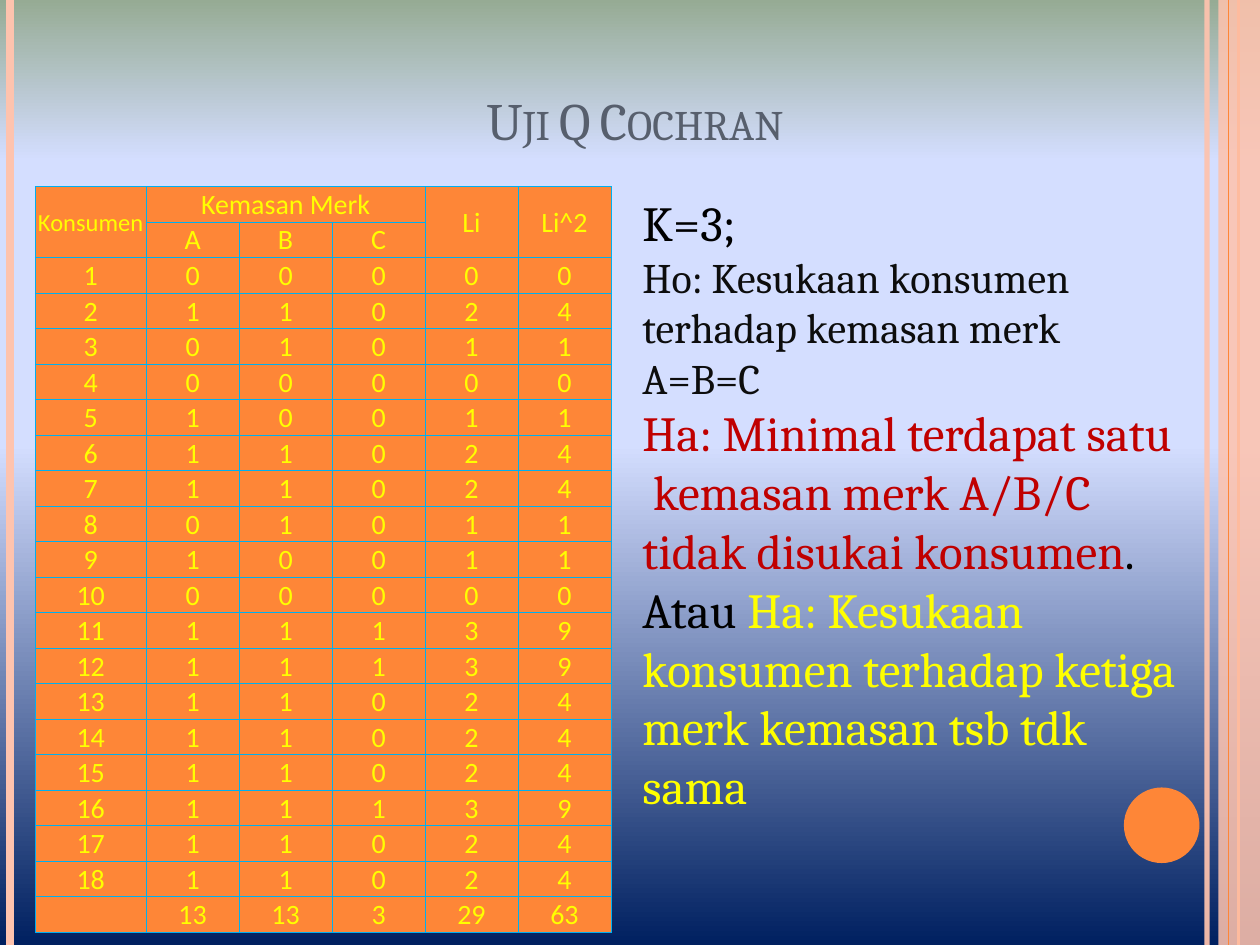
from lxml import etree
from pptx import Presentation
from pptx.dml.color import RGBColor
from pptx.enum import shapes, text
from pptx.oxml.ns import qn
from pptx.util import Inches, Pt

ORANGE = RGBColor(0xFE, 0x86, 0x37)
PEACH = RGBColor(0xFE, 0xC3, 0xAE)
SLATE = RGBColor(0x57, 0x5F, 0x6D)
YELLOW = RGBColor(0xFF, 0xFF, 0x00)
RED = RGBColor(0xC0, 0x00, 0x00)
BLACK = RGBColor(0x00, 0x00, 0x00)
NEAR_BLACK = RGBColor(0x0D, 0x0D, 0x0D)
SKY = RGBColor(0x00, 0xB0, 0xF0)
NAVY = RGBColor(0x00, 0x20, 0x60)
PALE_BLUE = RGBColor(0xD4, 0xDE, 0xFF)
SAGE = RGBColor(0x96, 0xAB, 0x94)

# Answers of each consumer for packagings A, B and C
ANSWERS = ("000 110 010 000 100 110 110 010 100 "
           "000 111 111 110 110 110 111 110 110").split()


def add_text(paragraph, content, size, color, font="Cambria", align=None, small_caps=False):
    """Append one formatted run to a paragraph."""
    run = paragraph.add_run()
    run.text = content
    run.font.size = Pt(size)
    run.font.name = font
    run.font.color.rgb = color
    if align is not None:
        paragraph.alignment = align
    if small_caps:
        run.font._element.set("cap", "small")


def set_alpha(shape, percent):
    for color in shape._element.spPr.iter(qn("a:srgbClr")):
        etree.SubElement(color, qn("a:alpha"), val=str(percent * 1000))


def paint_background(slide):
    fill = slide.background.fill
    fill.gradient()
    fill.gradient_angle = 90
    stop_list = fill.gradient_stops[0]._gs.getparent()
    for stop in list(stop_list):
        stop_list.remove(stop)
    for percent, color in ((0, NAVY), (53, PALE_BLUE), (83, PALE_BLUE), (100, SAGE)):
        stop = etree.SubElement(stop_list, qn("a:gs"), pos=str(percent * 1000))
        etree.SubElement(stop, qn("a:srgbClr"), val=str(color))


def add_stripe(slide, x, height, color, width):
    """Vertical line over the full slide height."""
    stripe = slide.shapes.add_connector(
        shapes.MSO_CONNECTOR.STRAIGHT, Inches(x), 0, Inches(x), height)
    stripe.line.color.rgb = color
    stripe.line.width = Pt(width)
    etree.SubElement(stripe._element.spPr, qn("a:effectLst"))
    return stripe


def add_plain_shape(slide, kind, left, top, width, height, color):
    shape = slide.shapes.add_shape(kind, left, top, width, height)
    shape.shadow.inherit = False
    shape.fill.solid()
    shape.fill.fore_color.rgb = color
    shape.line.fill.background()
    return shape


def add_decoration(slide, height):
    set_alpha(add_stripe(slide, 9.58, height, PEACH, 3), 93)
    add_stripe(slide, 0.08, height, PEACH, 4.5)
    add_stripe(slide, 9.83, height, ORANGE, 1.5)
    band = add_plain_shape(slide, shapes.MSO_SHAPE.RECTANGLE,
                           Inches(9.67), 0, Inches(0.33), height, PEACH)
    set_alpha(band, 87)
    add_stripe(slide, 9.75, height, ORANGE, 0.75)
    add_plain_shape(slide, shapes.MSO_SHAPE.OVAL, Inches(8.92), Inches(6.25),
                    Inches(0.6), Inches(0.6), ORANGE)


def fill_title(slide, left, top, width, height):
    title = slide.shapes.title
    title.left, title.top, title.width, title.height = left, top, width, height
    title.text_frame.vertical_anchor = text.MSO_ANCHOR.BOTTOM
    add_text(title.text_frame.paragraphs[0], "Uji Q Cochran", 30, SLATE,
             align=text.PP_ALIGN.CENTER, small_caps=True)


def table_rows():
    """Two heading rows, one row for each consumer, and the totals."""
    rows = [["Konsumen", "Kemasan Merk", "", "", "Li", "Li^2"],
            ["", "A", "B", "C", "", ""]]
    scores = []
    for answer in ANSWERS:
        values = [int(digit) for digit in answer]
        scores.append(values + [sum(values), sum(values) ** 2])
    rows += [[number, *score] for number, score in enumerate(scores, 1)]
    rows.append(["", *(sum(column) for column in zip(*scores))])
    return rows


def format_cell(cell, content):
    cell.margin_left = cell.margin_right = cell.margin_top = Inches(0.01)
    cell.margin_bottom = 0
    cell.vertical_anchor = text.MSO_ANCHOR.MIDDLE
    cell.fill.solid()
    cell.fill.fore_color.rgb = ORANGE
    paragraph = cell.text_frame.paragraphs[0]
    if content != "":
        size = 14 if content == "Konsumen" else 16
        add_text(paragraph, str(content), size, YELLOW, font="Calibri",
                 align=text.PP_ALIGN.CENTER)
    else:
        etree.SubElement(paragraph._p, qn("a:endParaRPr"), sz="1600")
    # Borders come before the fill in the cell properties
    properties = cell._tc.get_or_add_tcPr()
    for index, side in enumerate(("a:lnL", "a:lnR", "a:lnT", "a:lnB")):
        border = etree.Element(qn(side), w=str(Pt(0.5)))
        solid = etree.SubElement(border, qn("a:solidFill"))
        etree.SubElement(solid, qn("a:srgbClr"), val=str(SKY))
        properties.insert(index, border)


def add_score_table(slide, left, top, width, height):
    rows = table_rows()
    table = slide.shapes.add_table(len(rows), 6, left, top, width, height).table
    table.first_row = table.horz_banding = False
    first_width = Inches(0.88)
    for index, column in enumerate(table.columns):
        column.width = first_width if index == 0 else (width - first_width) // 5
    for row_index, row in enumerate(rows):
        for column_index, content in enumerate(row):
            format_cell(table.cell(row_index, column_index), content)
    # Headings that span rows or columns
    for column_index in (0, 4, 5):
        table.cell(0, column_index).merge(table.cell(1, column_index))
    table.cell(0, 1).merge(table.cell(0, 3))


def add_hypotheses(slide, left, top, width, height):
    frame = slide.shapes.add_textbox(left, top, width, height).text_frame
    frame.word_wrap = True
    frame.auto_size = text.MSO_AUTO_SIZE.SHAPE_TO_FIT_TEXT
    paragraphs = (
        [("K=3;", 28, BLACK)],
        [("Ho: Kesukaan konsumen terhadap kemasan merk A=B=C", 24, NEAR_BLACK)],
        [("Ha: Minimal terdapat satu  kemasan merk A/B/C tidak disukai konsumen", 28, RED),
         (". Atau ", 28, BLACK),
         ("Ha: Kesukaan konsumen terhadap ketiga merk kemasan tsb tdk sama", 28, YELLOW)],
    )
    for index, runs in enumerate(paragraphs):
        paragraph = frame.add_paragraph() if index else frame.paragraphs[0]
        for content, size, color in runs:
            add_text(paragraph, content, size, color)


def main():
    presentation = Presentation()
    presentation.slide_width, presentation.slide_height = Inches(10), Inches(7.5)
    slide = presentation.slides.add_slide(presentation.slide_layouts[5])
    paint_background(slide)
    add_decoration(slide, presentation.slide_height)
    fill_title(slide, Inches(0.58), Inches(0.52), Inches(8.92), Inches(0.73))
    add_score_table(slide, Inches(0.28), Inches(1.48), Inches(4.57), Inches(5.82))
    add_hypotheses(slide, Inches(5), Inches(1.48), Inches(4.45), Inches(5.08))
    presentation.save("out.pptx")


if __name__ == "__main__":
    main()
